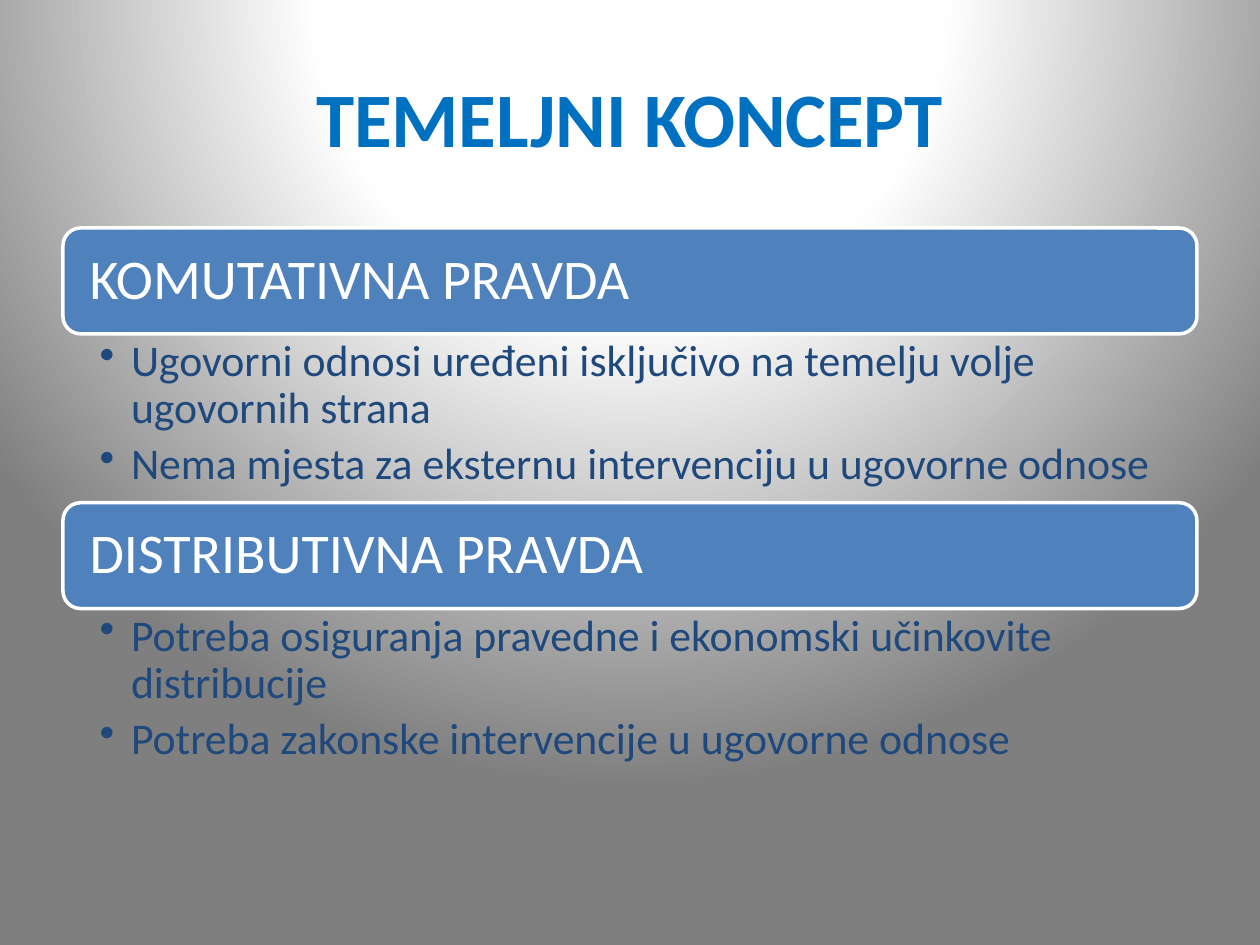
from dataclasses import dataclass

from pptx import Presentation
from pptx.dml.color import RGBColor
from pptx.enum.shapes import MSO_SHAPE
from pptx.enum.text import MSO_ANCHOR, PP_ALIGN
from pptx.oxml import parse_xml
from pptx.oxml.ns import nsdecls, qn
from pptx.util import Inches, Pt


@dataclass(frozen=True)
class Theme:
    font: str = "Calibri"
    title: str = "0070C0"
    bar: str = "4F81BD"
    white: str = "FFFFFF"
    body: str = "1F497D"
    stops: tuple = ((0, "FFFFFF"), (40, "FEFEFE"), (100, "7F7F7F"))
    title_size: int = 44
    bar_size: int = 32
    body_size: int = 25


THEME = Theme()
LEFT, WIDTH = Inches(0.5), Inches(9)
BAR_TOP, BAR_HIGH, STEP = Inches(1.81), Inches(0.84), Inches(2.18)
INDENT = Inches(0.25)

TOPICS = [
    ("KOMUTATIVNA PRAVDA", Inches(1.34), [
        "Ugovorni odnosi uređeni isključivo na temelju volje ugovornih strana",
        "Nema mjesta za eksternu intervenciju u ugovorne odnose",
    ]),
    ("DISTRIBUTIVNA PRAVDA", Inches(1.81), [
        "Potreba osiguranja pravedne i ekonomski učinkovite distribucije",
        "Potreba zakonske intervencije u ugovorne odnose",
    ]),
]

FRAMES = {
    "title": {"vertical_anchor": MSO_ANCHOR.MIDDLE},
    "bar": {"vertical_anchor": MSO_ANCHOR.MIDDLE,
            "margin_left": Inches(0.17), "margin_right": Inches(0.17)},
    "body": {"vertical_anchor": MSO_ANCHOR.TOP,
             "margin_left": Inches(0.29), "margin_right": Inches(0.25),
             "margin_top": Inches(0.04), "margin_bottom": Inches(0.04)},
}
PARAS = {
    "title": {"alignment": PP_ALIGN.CENTER},
    "bar": {"alignment": PP_ALIGN.LEFT, "line_spacing": 0.9},
    "body": {"alignment": PP_ALIGN.LEFT, "line_spacing": 0.9,
             "space_after": Pt(THEME.body_size * 0.2)},
}
FONTS = {
    "title": {"size": Pt(THEME.title_size), "bold": True},
    "bar": {"size": Pt(THEME.bar_size)},
    "body": {"size": Pt(THEME.body_size)},
}
COLORS = {"title": THEME.title, "bar": THEME.white, "body": THEME.body}


def apply(item, values):
    for name, value in values.items():
        setattr(item, name, value)


def write(shape, lines, role):
    """Fill a shape with one paragraph per line, styled for its role."""
    frame = shape.text_frame
    frame.word_wrap = True
    apply(frame, FRAMES[role])
    frame.text = "\n".join(lines)
    for para in frame.paragraphs:
        apply(para, PARAS[role])
        font = para.runs[0].font
        apply(font, {"name": THEME.font, **FONTS[role]})
        font.color.rgb = RGBColor.from_string(COLORS[role])
        if role == "body":
            props = para._p.get_or_add_pPr()
            props.set("marL", str(INDENT))
            props.set("indent", str(-INDENT))
            props.append(parse_xml(f'<a:buChar {nsdecls("a")} char="•"/>'))


deck = Presentation()
deck.slide_width, deck.slide_height = Inches(10), Inches(7.5)
slide = deck.slides.add_slide(deck.slide_layouts[6])
shapes = slide.shapes

# Round gradient, centred above the top edge
slide.background.fill.gradient()
plain = slide.element.find(".//" + qn("a:gradFill"))
stops = "".join(
    f'<a:gs pos="{spot * 1000}"><a:srgbClr val="{color}"/></a:gs>'
    for spot, color in THEME.stops
)
plain.getparent().replace(plain, parse_xml(
    f'<a:gradFill {nsdecls("a")} rotWithShape="1"><a:gsLst>{stops}</a:gsLst>'
    '<a:path path="circle">'
    '<a:fillToRect l="50000" t="-80000" r="50000" b="180000"/>'
    '</a:path></a:gradFill>'
))

title = shapes.add_textbox(LEFT, Inches(0.3), WIDTH, Inches(1.25))
write(title, ["TEMELJNI KONCEPT"], "title")

for row, (head, high, points) in enumerate(TOPICS):
    top = BAR_TOP + row * STEP
    bar = shapes.add_shape(MSO_SHAPE.ROUNDED_RECTANGLE, LEFT, top, WIDTH, BAR_HIGH)
    bar.shadow.inherit = False
    bar.fill.solid()
    bar.fill.fore_color.rgb = RGBColor.from_string(THEME.bar)
    bar.line.color.rgb = RGBColor.from_string(THEME.white)
    bar.line.width = Pt(2)
    write(bar, [head], "bar")
    body = shapes.add_textbox(LEFT, top + BAR_HIGH, WIDTH, high)
    write(body, points, "body")

deck.save("out.pptx")
